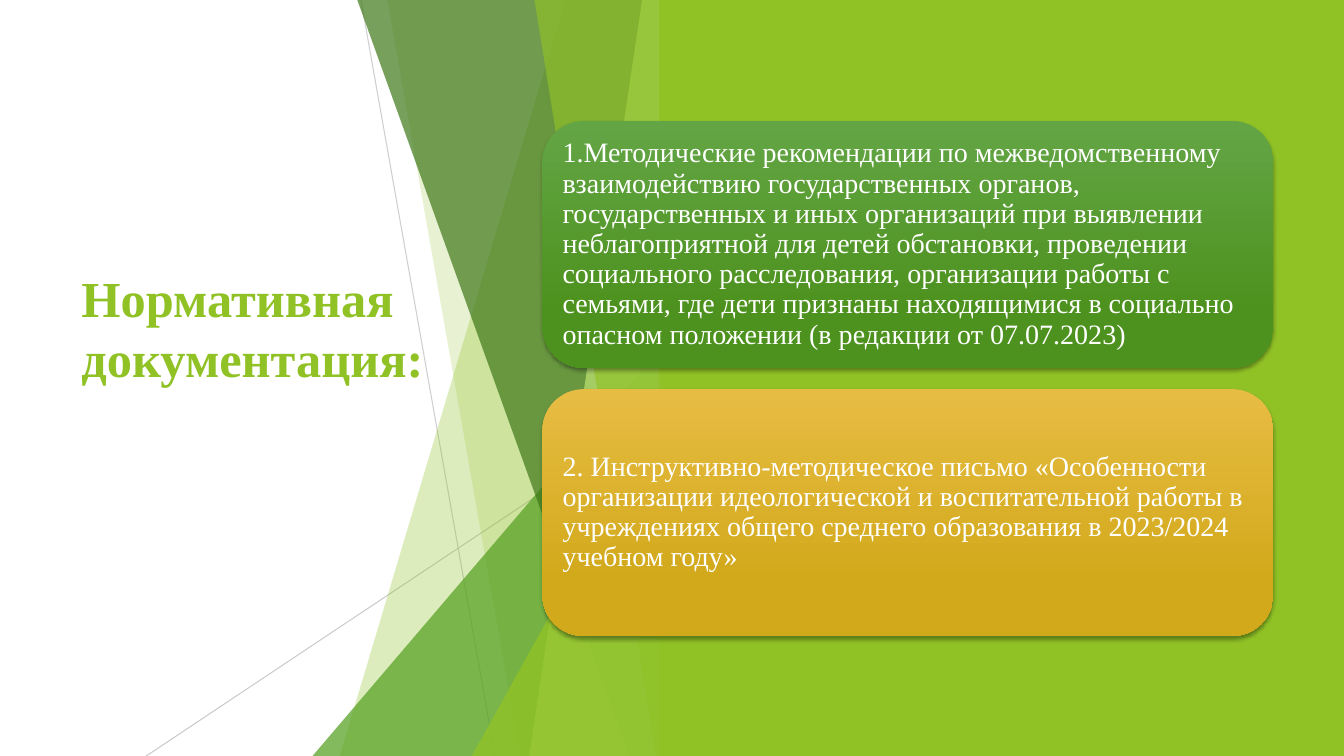
"""Build the slide that lists the normative documents."""
from dataclasses import dataclass

from lxml import etree
from pptx import Presentation, util as u
from pptx.dml import color
from pptx.enum import shapes, text
from pptx.oxml import ns

COLS, ROWS = 13.33, 7.5
BLEED = -0.01
EDGE = 6.66


@dataclass(frozen=True)
class Theme:
    font: str = "Times New Roman"
    title_size: int = 36
    body_size: int = 20
    hairline: float = 0.75
    lime: str = "90C226"
    green: str = "54A021"
    forest: str = "3F7819"
    pale: str = "C0E474"
    grey: str = "BFBFBF"
    white: str = "FFFFFF"
    black: str = "000000"
    leaf: tuple[str, str] = ("63A545", "4D921E")
    gold: tuple[str, str] = ("E7BC43", "D2A91B")


T = Theme()


@dataclass(frozen=True)
class Ray:
    x1: float
    y1: float
    x2: float
    alpha: int


@dataclass(frozen=True)
class Facet:
    top: float
    foot: float
    fill: str
    alpha: int


@dataclass(frozen=True)
class Wedge:
    left: float
    top: float
    fill: str
    alpha: int


@dataclass(frozen=True)
class Card:
    words: str
    colours: tuple[str, str]


RAYS = (Ray(3.58, 0, 4.91, 75), Ray(EDGE, 4.03, 1.45, 80))
PANES = (
    Facet(5.61, 3.37, T.lime, 30),
    Facet(3.84, 5.16, T.lime, 20),
    Wedge(3.1, 3.33, T.green, 72),
    Facet(3.54, 6.24, T.forest, 70),
    Facet(6.37, 5.25, T.pale, 70),
    Facet(5.3, 6.51, T.lime, 65),
    Wedge(4.68, 3.93, T.lime, 80),
)
CARDS = (
    Card("1.Методические рекомендации по межведомственному взаимодействию "
         "государственных органов, государственных и иных организаций при выявлении "
         "неблагоприятной для детей обстановки, проведении социального расследования, "
         "организации работы с семьями, где дети признаны находящимися в социально "
         "опасном положении (в редакции от 07.07.2023)", T.leaf),
    Card("2. Инструктивно-методическое письмо «Особенности организации идеологической "
         "и воспитательной работы в учреждениях общего среднего образования "
         "в 2023/2024 учебном году»", T.gold),
)
CARD_LEFT, CARD_TOP, CARD_W, CARD_H, CARD_STEP = 5.38, 1.2, 7.25, 2.45, 2.66
CARD_INSET = 0.08


def rgb(value: str) -> color.RGBColor:
    return color.RGBColor.from_string(value)


def add_alpha(parent, percent: int) -> None:
    for clr in parent.iter(ns.qn("a:srgbClr")):
        etree.SubElement(clr, ns.qn("a:alpha"), val=str(percent * 1000))


def paint(s, fill: str, alpha: int = 100) -> None:
    s.shadow.inherit = False
    s.fill.solid()
    s.fill.fore_color.rgb = rgb(fill)
    s.line.fill.background()
    if alpha < 100:
        add_alpha(s._element.spPr, alpha)


def add_preset(sp, kind, left: float, top: float, width: float, height: float):
    return sp.add_shape(kind, *map(u.Inches, (left, top, width, height)))


def draw_ray(sp, ray: Ray) -> None:
    s = sp.add_connector(shapes.MSO_CONNECTOR.STRAIGHT,
                         *map(u.Inches, (ray.x1, ray.y1, ray.x2, ROWS)))
    s.line.color.rgb = rgb(T.grey)
    s.line.width = u.Pt(T.hairline)
    sp_pr = s._element.spPr
    add_alpha(sp_pr, ray.alpha)
    etree.SubElement(sp_pr, ns.qn("a:effectLst"))


def draw_pane(sp, pane: Facet | Wedge) -> None:
    if isinstance(pane, Wedge):
        s = add_preset(sp, shapes.MSO_SHAPE.ISOSCELES_TRIANGLE, pane.left, pane.top,
                       EDGE - pane.left, ROWS - pane.top)
        s.adjustments[0] = 1
    else:
        outline = ((pane.top, BLEED), (EDGE, BLEED), (EDGE, ROWS), (pane.foot, ROWS))
        start, *rest = [(u.Inches(x), u.Inches(y)) for x, y in outline]
        builder = sp.build_freeform(*start)
        builder.add_line_segments(rest, close=True)
        s = builder.convert_to_shape()
    paint(s, pane.fill, pane.alpha)


def write(tf, words: str, size: int, fill: str, bold: bool = False):
    tf.word_wrap = True
    tf.vertical_anchor = text.MSO_ANCHOR.MIDDLE
    p = tf.paragraphs[0]
    p.alignment = text.PP_ALIGN.LEFT
    r = p.add_run()
    r.text = words
    r.font.name = T.font
    r.font.size = u.Pt(size)
    r.font.bold = bold
    r.font.color.rgb = rgb(fill)
    return p


def add_shadow(s) -> None:
    s.shadow.inherit = False
    effects = s._element.spPr.find(ns.qn("a:effectLst"))
    shadow = etree.SubElement(effects, ns.qn("a:outerShdw"), blurRad=str(u.Pt(3)),
                              dist=str(u.Pt(2)), dir="5400000", rotWithShape="0")
    etree.SubElement(shadow, ns.qn("a:srgbClr"), val=T.black)
    add_alpha(shadow, 35)


def draw_card(sp, card: Card, row: int) -> None:
    s = add_preset(sp, shapes.MSO_SHAPE.ROUNDED_RECTANGLE, CARD_LEFT,
                   CARD_TOP + row * CARD_STEP, CARD_W, CARD_H)
    s.line.fill.background()
    s.fill.gradient()
    s.fill.gradient_angle = 270
    for stop, position, value in zip(s.fill.gradient_stops, (0, 0.78), card.colours):
        stop.color.rgb = rgb(value)
        stop.position = position
    add_shadow(s)
    tf = s.text_frame
    tf.margin_left = tf.margin_right = u.Inches(CARD_INSET)
    tf.margin_top = tf.margin_bottom = u.Inches(CARD_INSET)
    p = write(tf, card.words, T.body_size, T.white)
    p.line_spacing = 0.9


def main() -> None:
    prs = Presentation()
    prs.slide_width, prs.slide_height = u.Inches(COLS), u.Inches(ROWS)
    slide = prs.slides.add_slide(prs.slide_layouts[6])
    slide.background.fill.solid()
    slide.background.fill.fore_color.rgb = rgb(T.white)
    sp = slide.shapes
    title = sp.add_textbox(*map(u.Inches, (0.71, 0.5, 3.88, 5.49)))
    write(title.text_frame, "Нормативная документация:", T.title_size, T.lime, bold=True)
    for ray in RAYS:
        draw_ray(sp, ray)
    for pane in PANES:
        draw_pane(sp, pane)
    paint(add_preset(sp, shapes.MSO_SHAPE.RECTANGLE, 6.54, 0, COLS - 6.54, ROWS), T.lime)
    for row, card in enumerate(CARDS):
        draw_card(sp, card, row)
    prs.save("out.pptx")


if __name__ == "__main__":
    main()
